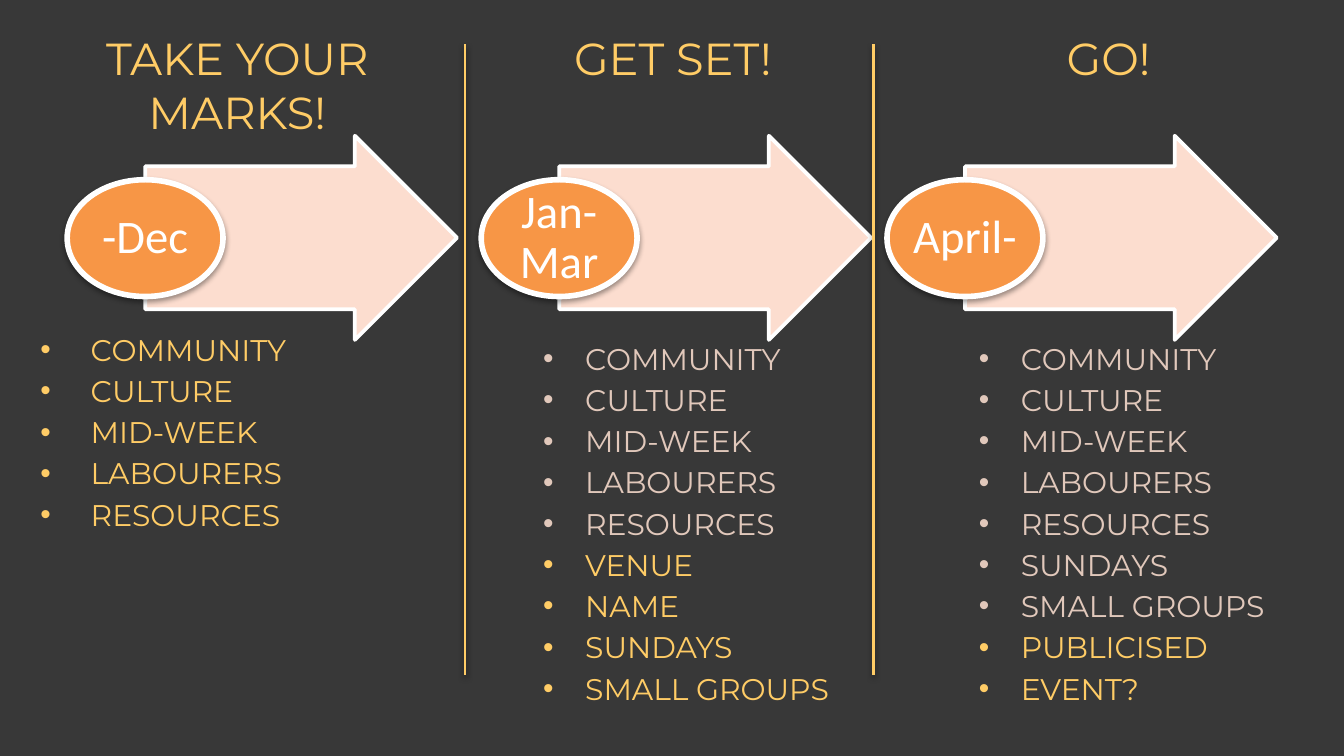
from lxml import etree
from pptx import Presentation
from pptx.dml.color import RGBColor
from pptx.enum import shapes, text
from pptx.oxml import ns
from pptx.util import Pt

COLORS = {
    "background": "383838",
    "gold": "FFCC66",
    "muted": "E1C8BB",
    "arrow": "FCDDCF",
    "badge": "F79646",
    "white": "FFFFFF",
    "shadow": "000000",
}
FONT = "Montserrat"
COLUMN_LEFT, COLUMN_WIDTH, COLUMN_STEP = 21.6, 211, 233.4
COMMON = ["COMMUNITY", "CULTURE", "MID-WEEK", "LABOURERS", "RESOURCES"]

# Heading, month, arrow left, list top, text indent, hanging, muted items, gold items
STAGES = [
    ("TAKE YOUR MARKS!", "-Dec", 36, 177.6, 27, 27, [], COMMON),
    ("GET SET!", "Jan-Mar", 257.8, 182.4, 58.5, 22.5,
     COMMON, ["VENUE", "NAME", "SUNDAYS", "SMALL GROUPS"]),
    ("GO!", "April-", 475.2, 182.4, 58.5, 22.5,
     COMMON + ["SUNDAYS", "SMALL GROUPS"], ["PUBLICISED", "EVENT?"]),
]


def rgb(name):
    return RGBColor.from_string(COLORS[name])


def place(shape, left, top, width, height):
    shape.left, shape.top = Pt(left), Pt(top)
    shape.width, shape.height = Pt(width), Pt(height)


def prepare_frame(shape, anchor):
    """Clear the insets, wrap the text and keep its size fixed."""
    frame = shape.text_frame
    frame.margin_left = frame.margin_right = 0
    frame.margin_top = frame.margin_bottom = 0
    frame.word_wrap = True
    frame.auto_size = text.MSO_AUTO_SIZE.NONE
    frame.vertical_anchor = anchor
    return frame


def style_font(font, name, size, color):
    font.name, font.size, font.bold = name, Pt(size), False
    font.color.rgb = rgb(color)


def add_shadow(shape):
    effects = etree.SubElement(shape._element.spPr, ns.qn("a:effectLst"))
    outer = etree.SubElement(
        effects, ns.qn("a:outerShdw"), blurRad=str(Pt(3.1)),
        dist=str(Pt(1.6)), dir="5400000", rotWithShape="0")
    color = etree.SubElement(outer, ns.qn("a:srgbClr"), val=COLORS["shadow"])
    etree.SubElement(color, ns.qn("a:alpha"), val="38000")


def add_bullet(para, indent, hanging):
    props = para._p.get_or_add_pPr()
    props.set("marL", str(Pt(indent)))
    props.set("indent", str(-Pt(hanging)))
    etree.SubElement(props, ns.qn("a:buFont"), typeface="Arial")
    etree.SubElement(props, ns.qn("a:buChar"), char="•")


def fill_heading(box, words, left):
    place(box, left, 16.4, COLUMN_WIDTH, 60)
    frame = prepare_frame(box, text.MSO_ANCHOR.TOP)
    para = frame.paragraphs[0]
    para.text = words
    para.alignment = text.PP_ALIGN.CENTER
    para.space_before = Pt(0)
    style_font(para.font, FONT, 24, "gold")


def fill_list(box, left, top, indent, hanging, muted, gold):
    place(box, left, top, COLUMN_WIDTH, 22.4 * len(muted + gold))
    frame = prepare_frame(box, text.MSO_ANCHOR.TOP)
    for index, words in enumerate(muted + gold):
        para = frame.add_paragraph() if index else frame.paragraphs[0]
        para.text = words
        para.alignment = text.PP_ALIGN.LEFT
        para.space_before = Pt(2.9 if index else 0)
        add_bullet(para, indent, hanging)
        style_font(para.font, FONT, 16, "muted" if index < len(muted) else "gold")


def add_month_arrow(page, month, left, top):
    group = page.shapes.add_group_shape()
    arrow = group.shapes.add_shape(
        shapes.MSO_SHAPE.RIGHT_ARROW,
        Pt(left + 41.8), Pt(top), Pt(167), Pt(109.4))
    arrow.adjustments[0], arrow.adjustments[1] = 0.7, 0.5
    arrow.shadow.inherit = False
    badge = group.shapes.add_shape(
        shapes.MSO_SHAPE.OVAL, Pt(left), Pt(top + 23.6), Pt(83.5), Pt(62.6))
    for shape, fill, weight in ((arrow, "arrow", 2), (badge, "badge", 3)):
        shape.fill.solid()
        shape.fill.fore_color.rgb = rgb(fill)
        shape.line.color.rgb = rgb("white")
        shape.line.width = Pt(weight)
    add_shadow(badge)

    para = prepare_frame(badge, text.MSO_ANCHOR.MIDDLE).paragraphs[0]
    para.text = month
    para.alignment = text.PP_ALIGN.CENTER
    para.line_spacing = 0.9
    style_font(para.font, "Calibri", 25, "white")


def add_divider(page, left, top, bottom):
    line = page.shapes.add_connector(
        shapes.MSO_CONNECTOR.STRAIGHT, Pt(left), Pt(top), Pt(left), Pt(bottom))
    line.line.color.rgb = rgb("gold")
    line.line.width = Pt(1.5)
    add_shadow(line)


def build_timeline(deck):
    page = deck.slides.add_slide(deck.slide_layouts.get_by_name("Comparison"))
    page.background.fill.solid()
    page.background.fill.fore_color.rgb = rgb("background")

    holders = {item.placeholder_format.idx: item for item in page.placeholders}
    headings = [holders[0], holders[1], holders[3]]
    lists = [holders[2], holders[4], page.shapes.add_textbox(0, 0, 0, 0)]
    for index, stage in enumerate(STAGES):
        heading, month, arrow_left, list_top, *items = stage
        left = COLUMN_LEFT + index * COLUMN_STEP
        fill_heading(headings[index], heading, left)
        fill_list(lists[index], left, list_top, *items)
        add_month_arrow(page, month, arrow_left, 72.7)
    for left in (249.1, 468):
        add_divider(page, left, 23.8, 361.4)


def main():
    deck = Presentation()
    deck.slide_width, deck.slide_height = Pt(720), Pt(405)
    build_timeline(deck)
    deck.save("out.pptx")


if __name__ == "__main__":
    main()
